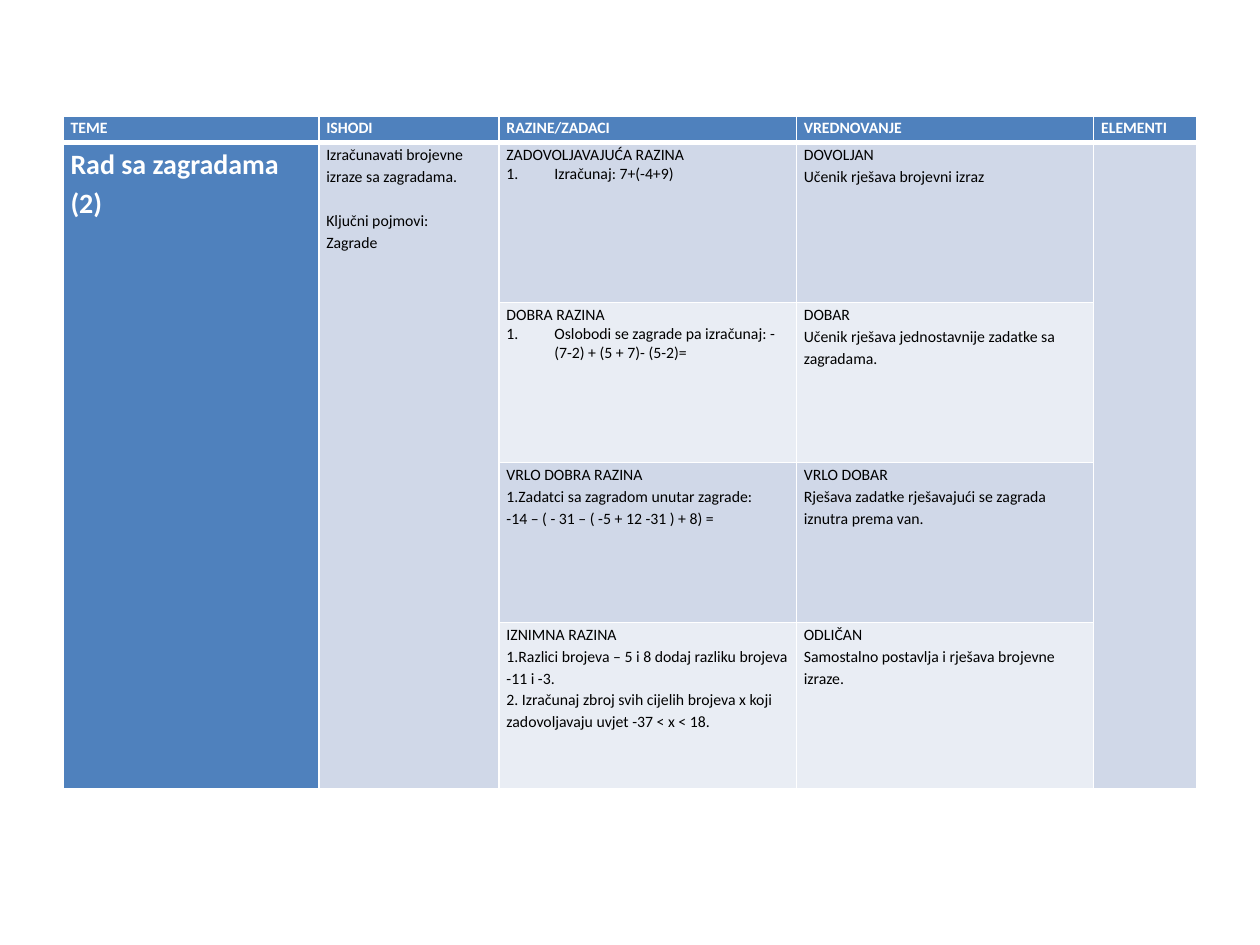
"""Build a slide with a table of topics, outcomes, levels and grades for work with brackets."""
from lxml import etree
from pptx import Presentation
from pptx import util as u
from pptx.dml.color import RGBColor
from pptx.oxml import ns

HUES = {"head": "4F81BD", "dark": "D0D8E8", "light": "E9EDF4", "line": "FFFFFF", "text": "000000"}
HEADS = ["TEME", "ISHODI", "RAZINE/ZADACI", "VREDNOVANJE", "ELEMENTI"]
TOPIC = "Rad sa zagradama (2)"
GOALS = ["Izračunavati brojevne izraze sa zagradama.", "Ključni pojmovi:", "Zagrade"]
TASKS = [
    ["ZADOVOLJAVAJUĆA RAZINA", "Izračunaj: 7+(-4+9)"],
    ["DOBRA RAZINA", "Oslobodi se zagrade pa izračunaj: -(7-2) + (5 + 7)- (5-2)="],
    ["VRLO DOBRA RAZINA", "1.Zadatci sa zagradom unutar zagrade:", "-14 – ( - 31 – ( -5 + 12 -31 ) + 8) ="],
    ["IZNIMNA RAZINA", "1.Razlici brojeva – 5 i 8 dodaj razliku brojeva -11 i -3.",
     "2. Izračunaj zbroj svih cijelih brojeva x koji zadovoljavaju uvjet -37 < x < 18."],
]
GRADES = [
    ["DOVOLJAN", "Učenik rješava brojevni izraz"],
    ["DOBAR", "Učenik rješava jednostavnije zadatke sa zagradama."],
    ["VRLO DOBAR", "Rješava zadatke rješavajući se zagrada iznutra prema van."],
    ["ODLIČAN", "Samostalno postavlja i rješava brojevne izraze."],
]
WIDTHS = [2.03, 1.43, 2.36, 2.36, 0.82]
HEIGHTS = [0.21, 1.27, 1.27, 1.27, 1.32]


def style(cell, hue, edges):
    """Set the margins, borders and fill of a cell."""
    cell.margin_left = cell.margin_right = u.Inches(0.06)
    cell.margin_top = cell.margin_bottom = 0
    props = cell._tc.get_or_add_tcPr()
    for side, width in edges.items():
        line = etree.SubElement(props, ns.qn(f"a:ln{side}"), w=str(u.Pt(width)))
        fill = etree.SubElement(line, ns.qn("a:solidFill"))
        etree.SubElement(fill, ns.qn("a:srgbClr"), val=HUES["line"])
    cell.fill.solid()
    cell.fill.fore_color.rgb = RGBColor.from_string(HUES[hue])


def write(cell, lines, size=9, hue="text", bold=False):
    """Put lines of text in a cell and format their runs."""
    cell.text_frame.text = "\n".join(lines)
    for para in cell.text_frame.paragraphs:
        para.line_spacing = 1.15
        for run in para.runs:
            run.font.name = "Calibri"
            run.font.size = u.Pt(size)
            run.font.bold = bold
            run.font.color.rgb = RGBColor.from_string(HUES[hue])


deck = Presentation()
deck.slide_width, deck.slide_height = u.Inches(10), u.Inches(7.5)
slide = deck.slides.add_slide(deck.slide_layouts[6])
frame = slide.shapes.add_table(5, 5, u.Inches(0.5), u.Inches(0.92), u.Inches(9), u.Inches(5.34))
table = frame.table
for col, width in zip(table.columns, WIDTHS):
    col.width = u.Inches(width)
for row, height in zip(table.rows, HEIGHTS):
    row.height = u.Inches(height)

for r in range(5):
    edges = {"L": 1, "R": 1, "T": 3 if r == 1 else 1, "B": 3 if r == 0 else 1}
    for c in range(5):
        if r == 0 or c == 0:
            hue = "head"
        elif c in (2, 3) and r % 2 == 0:
            hue = "light"
        else:
            hue = "dark"
        style(table.cell(r, c), hue, edges)

for c in (0, 1, 4):
    table.cell(1, c).merge(table.cell(4, c))
for c, head in enumerate(HEADS):
    write(table.cell(0, c), [head], hue="line", bold=True)
write(table.cell(1, 0), [TOPIC], 16, "line", True)
write(table.cell(1, 1), GOALS)
table.cell(1, 1).text_frame.paragraphs[1].space_before = u.Pt(12.6)
for r, (tasks, grade) in enumerate(zip(TASKS, GRADES), 1):
    write(table.cell(r, 2), tasks)
    write(table.cell(r, 3), grade)

for r in (1, 2):
    para = table.cell(r, 2).text_frame.paragraphs[1]
    para.line_spacing = 1.0
    props = para._p.get_or_add_pPr()
    props.set("marL", str(u.Inches(0.38)))
    props.set("indent", str(u.Inches(-0.38)))
    etree.SubElement(props, ns.qn("a:buAutoNum"), type="arabicPeriod")

deck.save("out.pptx")
